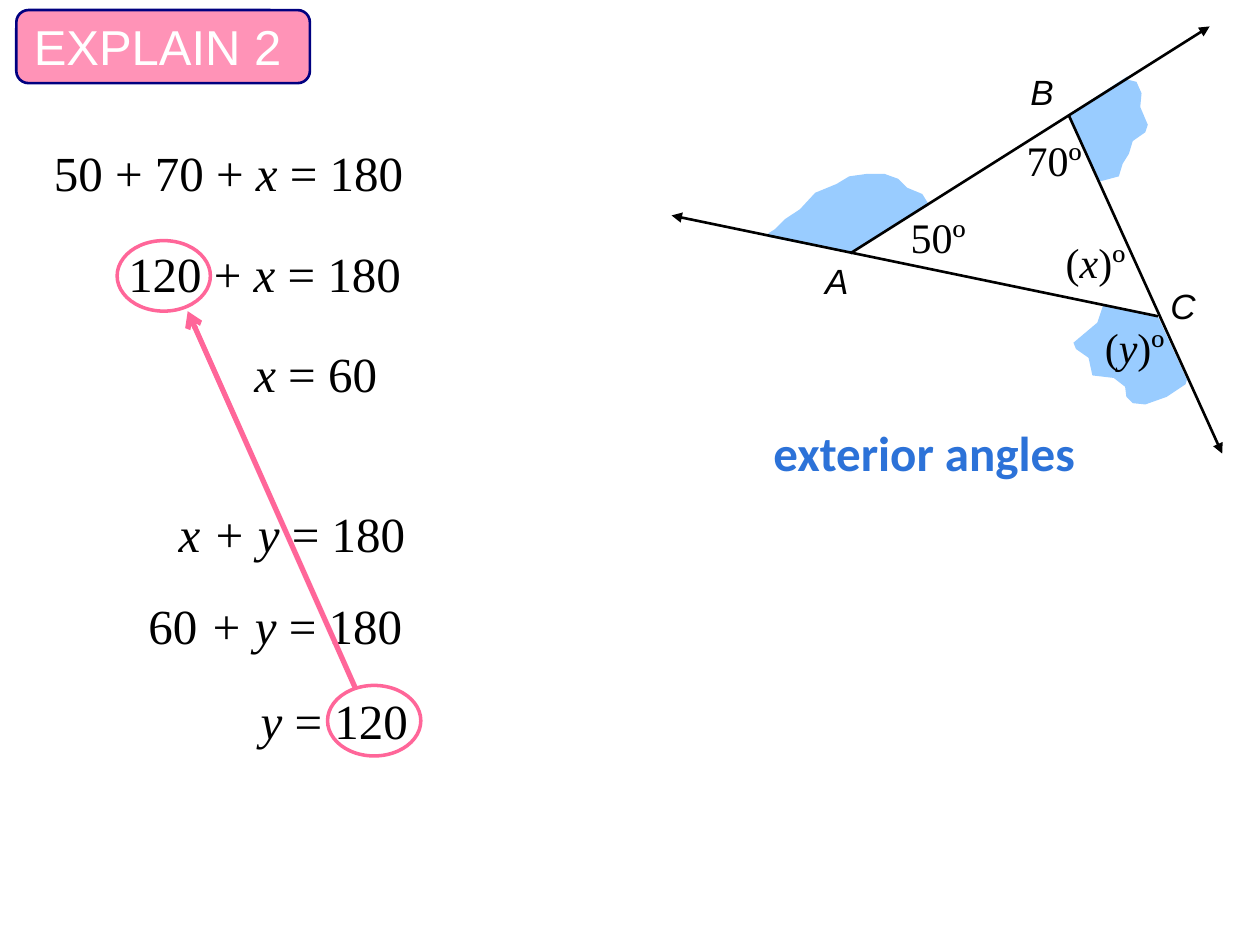
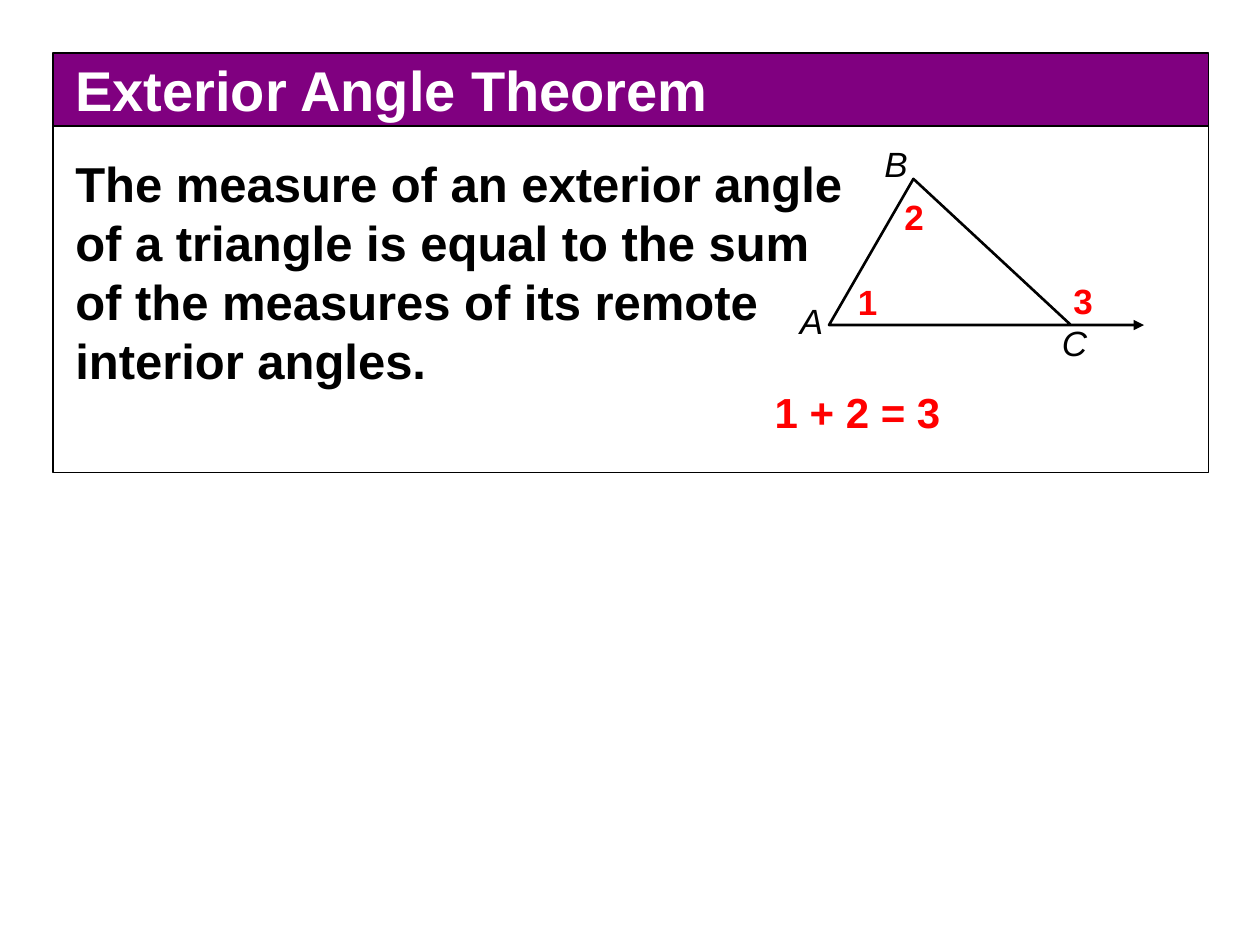
from lxml import etree
from pptx import Presentation
from pptx import util as u
from pptx.dml.color import RGBColor
from pptx.enum import shapes
from pptx.oxml.ns import qn

BLACK = RGBColor(0x00, 0x00, 0x00)
WHITE = RGBColor(0xFF, 0xFF, 0xFF)
SKY = RGBColor(0x99, 0xCC, 0xFF)
BLUE = RGBColor(0x2C, 0x72, 0xD8)
NAVY = RGBColor(0x00, 0x00, 0x80)
ROSE = RGBColor(0xFF, 0x93, 0xB7)
PINK = RGBColor(0xFF, 0x66, 0x99)
PURPLE = RGBColor(0x80, 0x00, 0x80)
RED = RGBColor(0xFF, 0x00, 0x00)
SANS, SERIF = "Arial", "Times New Roman"

deck = Presentation()
deck.slide_width, deck.slide_height = u.Inches(10), u.Inches(7.5)
CELL = deck.slide_width // 100  # grid of 100 columns by 75 rows
BLANK = deck.slide_layouts[6]


def write(slide, x, y, w, words, size, font=SANS, color=BLACK, bold=False, lines=1):
    """Add a text box; parts of words between asterisks are italic."""
    high = lines * size / 6 + 1
    box = slide.shapes.add_textbox(*[round(n * CELL) for n in (x, y, w, high)])
    box.text_frame.word_wrap = True
    para = box.text_frame.paragraphs[0]
    para.font.size, para.font.name, para.font.bold = u.Pt(size), font, bold
    para.font.color.rgb = color
    for i, part in enumerate(words.split("*")):
        if part:
            run = para.add_run()
            run.text, run.font.italic = part, i % 2 == 1


def paint(shape, fill=None, edge=None, width=1.5, tip=None):
    """Set fill, line and arrowhead, and take the shadow away."""
    if hasattr(shape, "fill"):
        if fill is None:
            shape.fill.background()
        else:
            shape.fill.solid()
            shape.fill.fore_color.rgb = fill
    if edge is None:
        shape.line.fill.background()
    else:
        shape.line.color.rgb = edge
        shape.line.width = u.Pt(width)
    props = shape._element.spPr
    if tip:
        etree.SubElement(props.find(qn("a:ln")), qn("a:tailEnd"), type=tip)
    etree.SubElement(props, qn("a:effectLst"))


# Slide 1: exterior angles of a triangle
page = deck.slides.add_slide(BLANK)

# Each sky wedge is cut to its angle by the white patch after it
patches = [
    (SKY, [(73.7, 16.2), (73.2, 15.4), (72, 14.9), (71.3, 14.2), (70.2, 13.8),
           (68.8, 13.8), (67.4, 14), (66.4, 14.6), (64.7, 15.3), (63.5, 16.6),
           (62.3, 17.4), (61.5, 18.2), (61, 18.5), (60.6, 20), (64.5, 21.7),
           (69.2, 21.5), (70.7, 21), (72.7, 19.5), (73.7, 17.1)]),
    (WHITE, [(57.3, 18.1), (67.5, 20.1), (75.7, 15.1), (72.6, 22.1), (63.5, 23.1)]),
    (SKY, [(89.4, 6.3), (90.2, 6.5), (90.6, 7.4), (90.5, 8.5), (91.1, 9.9),
           (90.9, 10.5), (89.9, 11.2), (89.6, 12.2), (89.1, 13), (88.8, 14),
           (87.3, 14.4), (85.9, 14.3), (85.2, 13.3), (84.4, 11.5), (84, 10),
           (86.1, 6.8), (87.4, 5.9), (88.9, 5.4), (89.6, 5.6)]),
    (WHITE, [(84.8, 9.1), (94, 3.1), (79.7, 6.1), (84.8, 16.1), (88.9, 18.1)]),
    (SKY, [(94.1, 30.5), (92.6, 31.5), (90.9, 32.1), (89.9, 32), (89.4, 31.5),
           (89.3, 30.7), (88.4, 30), (86.7, 29.8), (86.4, 28.4), (85.4, 27.7),
           (85.2, 27.2), (87.1, 25.6), (87.6, 24.1), (89.4, 23.6), (91.6, 23.8),
           (93.3, 26.1), (94, 27.1), (94.6, 28.7)]),
    (WHITE, [(91.9, 25.1), (82.8, 23.1), (94, 23.1), (96, 34)]),
]
for color, spots in patches:
    spots = [(round(x * CELL), round(y * CELL)) for x, y in spots]
    pen = page.shapes.build_freeform(*spots[0])
    pen.add_line_segments(spots[1:])
    paint(pen.convert_to_shape(), color)

badge = page.shapes.add_shape(
    shapes.MSO_SHAPE.ROUNDED_RECTANGLE,
    *[round(n * CELL) for n in (1.3, 0.8, 23.3, 5.8)])
paint(badge, ROSE, NAVY)
write(page, 1.7, 0.8, 30.2, "EXPLAIN 2", 28, color=WHITE)
write(page, 60.4, 33, 31.5, "exterior angles", 28, "Calibri", BLUE, True)

for x, y, name in [(64.5, 20.1, "A"), (80.8, 5.1, "B"), (91.9, 22.1, "C")]:
    write(page, x, y, 5.1, f"*{name}*", 20)
for x, y, angle in [(71.3, 16.3, "50º"), (80.5, 10.2, "70º"),
                    (83.6, 18.3, "(*x*)º"), (86.7, 25, "(*y*)º")]:
    write(page, x, y, 10, angle, 24, SERIF)

for x, y, step in [
    (3.3, 10.8, "50 + 70 + *x* = 180"),
    (9.2, 18.8, "120 + *x* = 180"),
    (19.2, 26.8, "*x* = 60"),
    (13.2, 39.5, "*x + y* = 180"),
    (10.8, 46.8, "60* + y* = 180"),
    (19.7, 54.3, "*y* = 120"),
]:
    write(page, x, y, 35, step, 28, SERIF)

for x, y in [(26, 54.4), (9.3, 19.1)]:
    ring = page.shapes.add_shape(
        shapes.MSO_SHAPE.OVAL, *[round(n * CELL) for n in (x, y, 7.4, 5.6)])
    paint(ring, edge=PINK, width=2)

for ends, color, width, tip in [
    ((67.5, 20.1, 96, 2.1), BLACK, 1.5, "triangle"),
    ((91.9, 25.1, 53.3, 17.1), BLACK, 1.5, "triangle"),
    ((84.8, 9.1, 97, 36), BLACK, 1.5, "triangle"),
    ((28.2, 54.6, 14.9, 24.7), PINK, 3, "arrow"),
]:
    ray = page.shapes.add_connector(
        shapes.MSO_CONNECTOR.STRAIGHT, *[round(n * CELL) for n in ends])
    paint(ray, edge=color, width=width, tip=tip)

# Slide 2: the theorem
page = deck.slides.add_slide(BLANK)
for y, high, color in [(4.2, 5.8, PURPLE), (10, 27.5, None)]:
    panel = page.shapes.add_shape(
        shapes.MSO_SHAPE.RECTANGLE,
        *[round(n * CELL) for n in (4.2, y, 91.7, high)])
    paint(panel, color, BLACK, 0.75)
write(page, 5, 3.9, 91.7, "Exterior Angle Theorem", 32, color=WHITE, bold=True)
write(page, 5, 11.7, 64.2,
      "The measure of an exterior angle of a triangle is equal to the sum "
      "of the measures of its remote interior angles.", 28, bold=True, lines=4)

spots = [(round(x * CELL), round(y * CELL))
         for x, y in [(85, 25.8), (72.5, 14.2), (65.8, 25.8), (90.8, 25.8)]]
pen = page.shapes.build_freeform(*spots[0])
pen.add_line_segments(spots[1:], close=False)
paint(pen.convert_to_shape(), edge=BLACK, tip="triangle")

for x, y, name in [(62.5, 23.3, "A"), (69.2, 10.8, "B"), (83.3, 25, "C")]:
    write(page, x, y, 4.2, f"*{name}*", 20)
for x, y, mark in [(67.1, 21.8, "1"), (70.8, 15, "2"), (84.2, 21.7, "3")]:
    write(page, x, y, 5.8, mark, 20, color=RED, bold=True)
write(page, 60.5, 30.2, 30, "1 + 2 = 3", 24, color=RED, bold=True)

deck.save("out.pptx")
